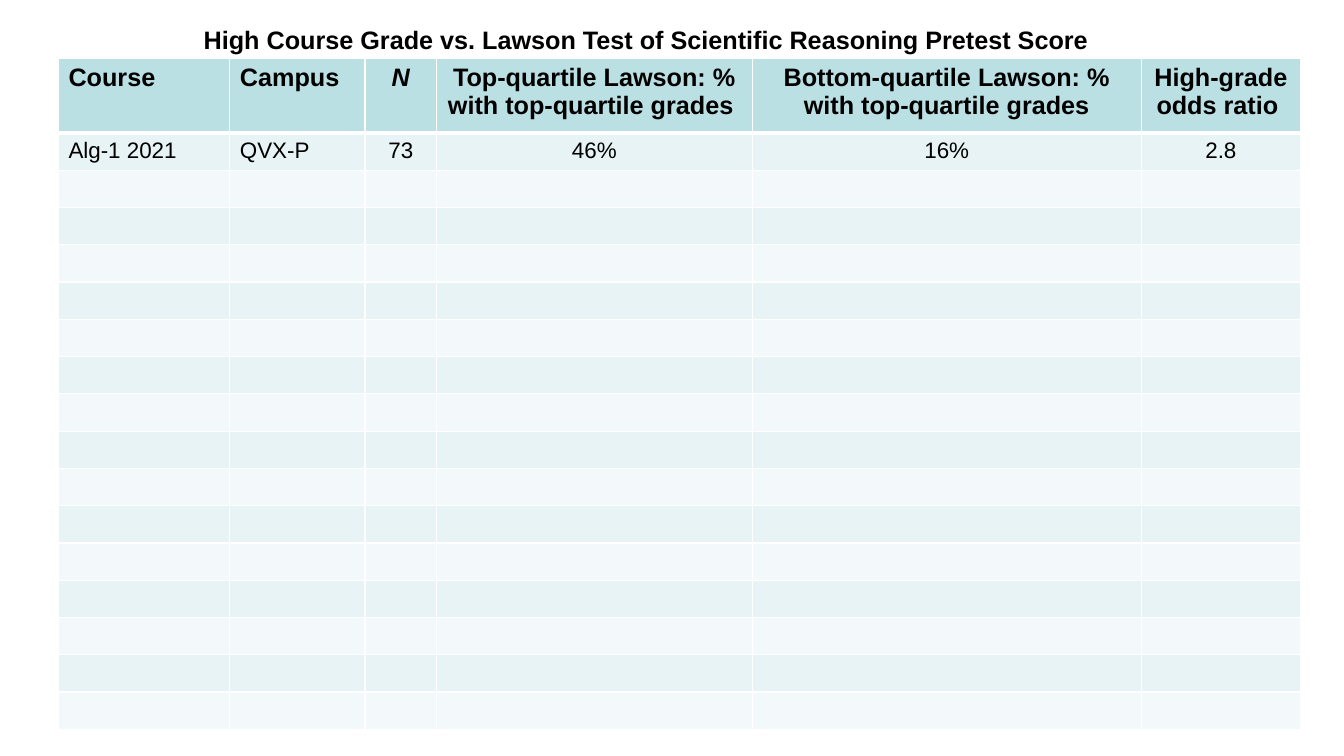
from lxml import etree
from pptx import Presentation
from pptx.dml.color import RGBColor
from pptx.enum import text
from pptx.oxml import ns
from pptx.util import Inches, Pt

BLACK = RGBColor(0x00, 0x00, 0x00)
WHITE = RGBColor(0xFF, 0xFF, 0xFF)
HEADER = RGBColor(0xBB, 0xE0, 0xE3)
BANDS = (RGBColor(0xE7, 0xF3, 0xF4), RGBColor(0xF3, 0xF9, 0xFA))

HEAD_FONT = {"name": "Arial", "size": Pt(18), "bold": True}
BODY_FONT = {"name": "Arial", "size": Pt(16), "bold": False}

TITLE = "High Course Grade vs. Lawson Test of Scientific Reasoning Pretest Score"
HEADINGS = ["Course", "Campus", "N", "Top-quartile Lawson: % with top-quartile grades ",
            "Bottom-quartile Lawson: % with top-quartile grades", "High-grade odds ratio "]
RESULTS = [["Alg-1 2021", "QVX-P", "73", "46%", "16%", "2.8"]]
EMPTY_ROWS = 15
COL_WIDTHS = [1.7, 1.34, 0.71, 3.13, 3.86, 1.58]
HEAD_HEIGHT, ROW_HEIGHT = 0.74, 0.37
LEFT_COLS = 2


def set_font(font, values):
    for name, value in values.items():
        setattr(font, name, value)
    font.color.rgb = BLACK


def add_title(s, left, top, width, height):
    sp = s.shapes.title
    sp.left, sp.top, sp.width, sp.height = map(Inches, (left, top, width, height))
    tf = sp.text_frame
    for name, value in {"word_wrap": True, "auto_size": text.MSO_AUTO_SIZE.NONE,
                        "vertical_anchor": text.MSO_ANCHOR.TOP}.items():
        setattr(tf, name, value)
    p = tf.paragraphs[0]
    p.alignment = text.PP_ALIGN.LEFT
    r = p.add_run()
    r.text = TITLE
    set_font(r.font, HEAD_FONT)


def set_borders(cell, widths):
    tc_pr = cell._tc.get_or_add_tcPr()
    for side, width in widths.items():
        ln = etree.SubElement(tc_pr, ns.qn("a:ln" + side), w=str(Pt(width)))
        fill = etree.SubElement(ln, ns.qn("a:solidFill"))
        etree.SubElement(fill, ns.qn("a:srgbClr"), val=str(WHITE))


def fill_cell(cell, value, row, col):
    set_borders(cell, {"L": 1, "R": 1, "T": 3 if row == 1 else 1, "B": 3 if row == 0 else 1})
    cell.fill.solid()
    cell.fill.fore_color.rgb = BANDS[(row - 1) % 2] if row else HEADER
    p = cell.text_frame.paragraphs[0]
    p.alignment = text.PP_ALIGN.LEFT if col < LEFT_COLS else text.PP_ALIGN.CENTER
    if value:
        r = p.add_run()
        r.text = value
        set_font(r.font, BODY_FONT if row else HEAD_FONT)
        r.font.italic = value == "N"
    else:
        end = etree.SubElement(p._p, ns.qn("a:endParaRPr"),
                               sz=str(int(BODY_FONT["size"].pt * 100)))
        etree.SubElement(end, ns.qn("a:latin"), typeface=BODY_FONT["name"])


def add_results(s, left, top, width, height):
    rows = [HEADINGS] + RESULTS + [[""] * len(HEADINGS)] * EMPTY_ROWS
    table = s.shapes.add_table(len(rows), len(HEADINGS),
                               *map(Inches, (left, top, width, height))).table
    for column, col_width in zip(table.columns, COL_WIDTHS):
        column.width = Inches(col_width)
    for i, values in enumerate(rows):
        table.rows[i].height = Inches(ROW_HEIGHT if i else HEAD_HEIGHT)
        for j, value in enumerate(values):
            fill_cell(table.cell(i, j), value, i, j)


def main():
    prs = Presentation()
    prs.slide_width, prs.slide_height = Inches(13.33), Inches(7.5)
    s = prs.slides.add_slide(prs.slide_layouts[5])
    add_results(s, 0.58, 0.58, 12.33, 6.61)
    add_title(s, 1.92, 0.19, 9.31, 0.4)
    prs.save("out.pptx")


if __name__ == "__main__":
    main()
